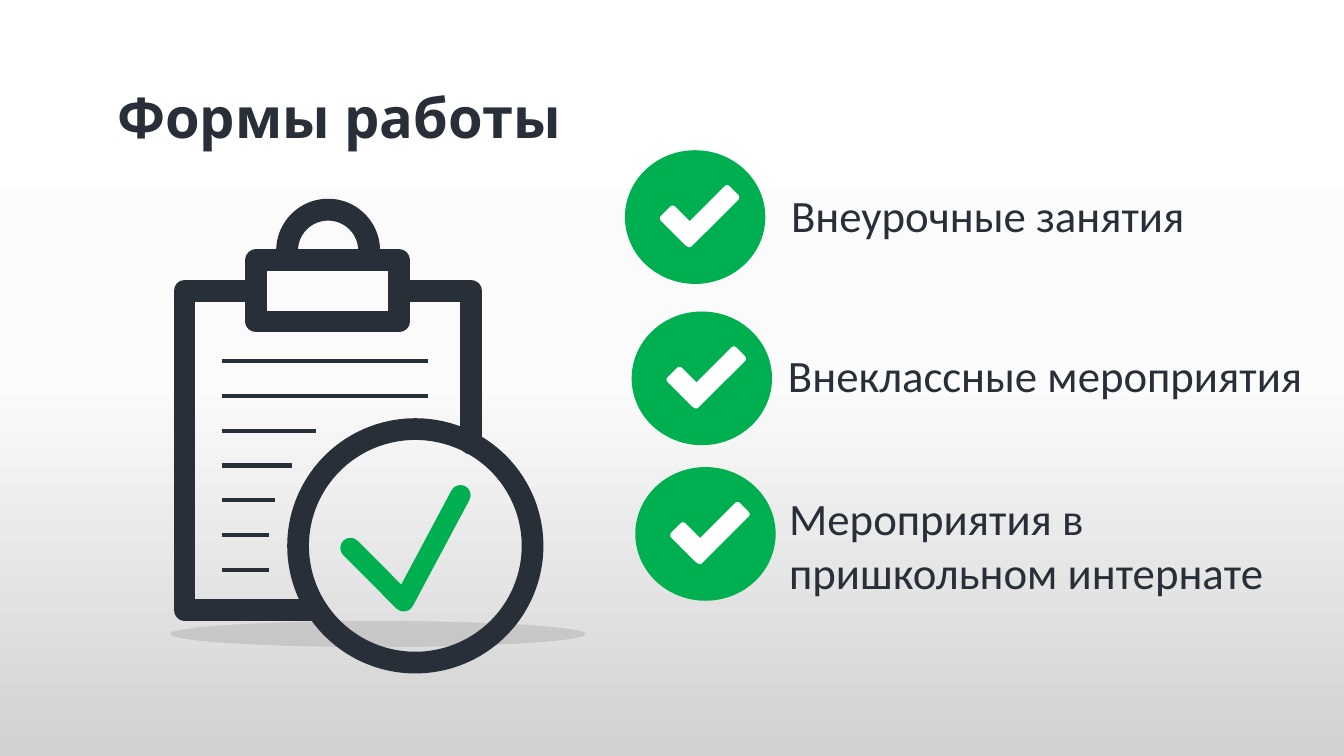
from copy import deepcopy

from lxml.etree import SubElement
from pptx import Presentation
from pptx.dml.color import RGBColor
from pptx.enum.shapes import MSO_CONNECTOR as CONN, MSO_SHAPE as SHAPE
from pptx.enum.text import MSO_ANCHOR as ANCHOR, PP_ALIGN as ALIGN
from pptx.oxml.ns import qn
from pptx.util import Pt

C = {"ink": "282F39", "green": "00B050", "white": "FFFFFF", "black": "000000",
     "pale": "FBFBFB", "gray": "D1D1D1"}


def write(tf, text, size=32, font="Calibri", bold=False, align=ALIGN.LEFT, wrap=False):
    tf.word_wrap = wrap
    tf.vertical_anchor = ANCHOR.TOP
    for i, line in enumerate(text.split("\n")):
        p = tf.paragraphs[0] if i == 0 else tf.add_paragraph()
        p.alignment = align
        r = p.add_run()
        r.text = line
        r.font.size = Pt(size)
        r.font.name = font
        r.font.bold = bold
        r.font.color.rgb = RGBColor.from_string(C["ink"])


def paint(sp, fill=None, line=None, width=15.5):
    sp.shadow.inherit = False
    if fill:
        sp.fill.solid()
        sp.fill.fore_color.rgb = RGBColor.from_string(C[fill])
    else:
        sp.fill.background()
    if line:
        sp.line.width = Pt(width)
        sp.line.color.rgb = RGBColor.from_string(C[line])
        ln = sp.element.spPr.find(qn("a:ln"))
        ln.set("cap", "rnd")
        SubElement(ln, qn("a:round"))
    else:
        sp.line.fill.background()


prs = Presentation()
prs.slide_width, prs.slide_height = Pt(960), Pt(540)
s = prs.slides.add_slide(prs.slide_layouts[5])

bg = s.background.fill
bg.gradient()
bg.gradient_angle = 270
stops = s.element.find(".//" + qn("a:gsLst"))
stops.insert(1, deepcopy(stops[0]))
for stop, position, color in zip(bg.gradient_stops, (0, 0.5, 1), ("white", "pale", "gray")):
    stop.position = position
    stop.color.rgb = RGBColor.from_string(C[color])

title = s.shapes.title
title.left, title.top, title.width, title.height = Pt(31), Pt(55.4), Pt(432.7), Pt(55.4)
write(title.text_frame, "Формы работы ", size=40, font="Noto Sans", bold=True,
      align=ALIGN.CENTER, wrap=True)

ground = s.shapes.add_shape(SHAPE.OVAL, Pt(121.7), Pt(443.5), Pt(296.6), Pt(18.7))
paint(ground, "black")
shade = ground.element.spPr.find(".//" + qn("a:srgbClr"))
SubElement(shade, qn("a:alpha")).set("val", "10000")

clipboard = s.shapes.add_group_shape().shapes
strokes = [
    ("ink", 15.5, [(183, 207.7), (131.8, 207.7), (131.8, 435.6), (226, 435.6)]),
    ("ink", 15.5, [(285, 207.7), (336.6, 207.7), (336.6, 317)]),
    ("green", 14.5, [(250.3, 391.4), (288.4, 429.6), (328.9, 353.7)]),
]
for color, width, points in strokes:
    (x, y), *rest = [(Pt(px), Pt(py)) for px, py in points]
    outline = clipboard.build_freeform(x, y)
    outline.add_line_segments(rest, close=False)
    paint(outline.convert_to_shape(), line=color, width=width)

clip = clipboard.add_shape(SHAPE.RECTANGLE, Pt(183), Pt(185.8), Pt(102), Pt(43.9))
paint(clip, line="ink")
handle = clipboard.add_shape(SHAPE.BLOCK_ARC, Pt(197.3), Pt(142), Pt(74.2), Pt(74.2))
handle.adjustments[2] = 0.21
paint(handle, "ink")
ring = clipboard.add_shape(SHAPE.OVAL, Pt(212.9), Pt(306.5), Pt(167.5), Pt(166.8))
paint(ring, line="ink")

for i, length in enumerate((147, 147, 67.5, 50.4, 38.2, 33.8, 33.8)):
    y = Pt(257.8 + 24.9 * i)
    rule = clipboard.add_connector(CONN.STRAIGHT, Pt(158.4), y, Pt(158.4 + length), y)
    rule.line.width = Pt(3)
    rule.line.color.rgb = RGBColor.from_string(C["ink"])
    SubElement(rule.element.spPr, qn("a:effectLst"))

badge_parts = [
    (SHAPE.OVAL, 0, 0, 100.3, 95.5, 0, "green"),
    (SHAPE.ROUNDED_RECTANGLE, 24.7, 46.8, 29.5, 14.4, 45, "white"),
    (SHAPE.ROUNDED_RECTANGLE, 33.6, 40.3, 51.8, 13.7, 135, "white"),
]
forms = [
    (446.4, 107.3, 558, 130.3, 298, 46, "Внеурочные занятия"),
    (451.2, 222.5, 555.8, 244.8, 393.1, 46, "Внеклассные мероприятия"),
    (453.8, 333.6, 556.6, 347, 370.8, 85, "Мероприятия в\nпришкольном интернате"),
]
for x, y, left, top, width, height, text in forms:
    badge = s.shapes.add_group_shape().shapes
    for kind, dx, dy, w, h, angle, color in badge_parts:
        part = badge.add_shape(kind, Pt(x + dx), Pt(y + dy), Pt(w), Pt(h))
        part.rotation = angle
        paint(part, color)
    label = s.shapes.add_textbox(Pt(left), Pt(top), Pt(width), Pt(height))
    write(label.text_frame, text)

prs.save("out.pptx")
